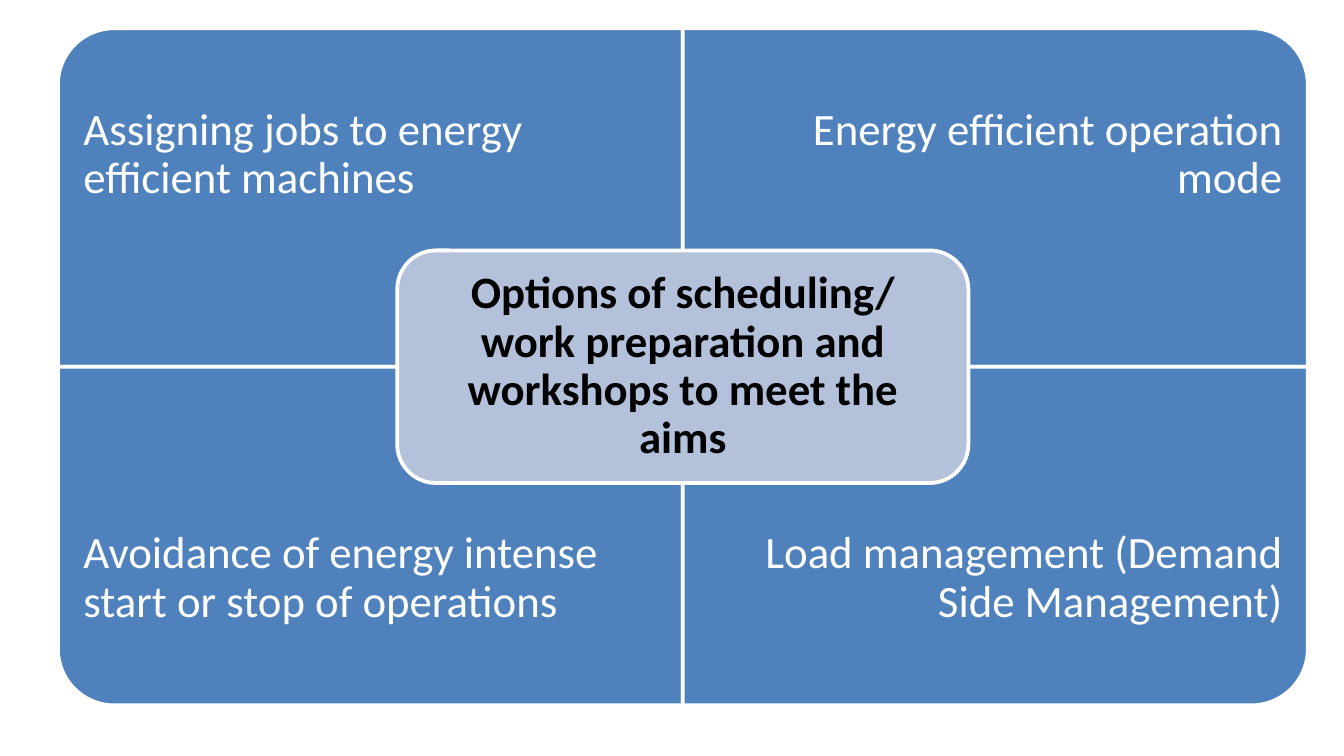
import dataclasses
import pptx
import pptx.dml.color
import pptx.enum.shapes
import pptx.enum.text
import pptx.util

Pt = pptx.util.Pt
RGB = pptx.dml.color.RGBColor.from_string
Kind = pptx.enum.shapes.MSO_SHAPE
Align = pptx.enum.text.PP_ALIGN


@dataclasses.dataclass(frozen=True)
class Theme:
    """Hold the colours and type of the slide."""
    blue: str = "4F81BD"
    pale: str = "B3C1DB"
    white: str = "FFFFFF"
    black: str = "000000"
    font: str = "Calibri"
    size: int = 24
    line: int = 2


THEME = Theme()
LEFT, TOP = 31, 15.1
WIDE, HIGH = 334.8, 181.4
TILES = [
    ("Assigning jobs to energy efficient machines", 0, 0, 270),
    ("Energy efficient operation mode", 1, 0, 0),
    ("Avoidance of energy intense start or stop of operations", 0, 1, 180),
    ("Load management (Demand Side Management)", 1, 1, 90),
]
HUB = "Options of scheduling/ work preparation and workshops to meet the aims"


def add_panel(slide, kind, midx, midy, wide, high, fill):
    """Add a filled, outlined shape around a centre point."""
    panel = slide.shapes.add_shape(
        kind, Pt(midx - wide / 2), Pt(midy - high / 2), Pt(wide), Pt(high))
    panel.shadow.inherit = False
    panel.fill.solid()
    panel.fill.fore_color.rgb = RGB(fill)
    panel.line.color.rgb = RGB(THEME.white)
    panel.line.width = Pt(THEME.line)
    return panel


def set_text(shape, text, align, color, inset, bold=False):
    """Write and format one paragraph in a shape."""
    frame = shape.text_frame
    frame.word_wrap = True
    frame.vertical_anchor = pptx.enum.text.MSO_ANCHOR.MIDDLE
    frame.margin_left = frame.margin_right = Pt(inset)
    frame.margin_top = frame.margin_bottom = Pt(inset)
    frame.text = text
    para = frame.paragraphs[0]
    para.alignment = align
    para.line_spacing = 0.9
    font = para.runs[0].font
    font.name = THEME.font
    font.size = Pt(THEME.size)
    font.bold = bold
    font.color.rgb = RGB(color)


def add_tile(slide, text, col, row, turn):
    """Add a quarter of the matrix with its label at the outer edge."""
    left, top = LEFT + col * WIDE, TOP + row * HIGH
    size = (HIGH, WIDE) if turn % 180 else (WIDE, HIGH)
    tile = add_panel(slide, Kind.ROUND_1_RECTANGLE,
                     left + WIDE / 2, top + HIGH / 2, *size, THEME.blue)
    tile.rotation = turn
    label = slide.shapes.add_textbox(
        Pt(left), Pt(top + row * HIGH / 4), Pt(WIDE), Pt(HIGH * 0.75))
    align = Align.RIGHT if col else Align.LEFT
    set_text(label, text, align, THEME.white, 13.7)


def add_hub(slide):
    """Add the central title over the four tiles."""
    hub = add_panel(slide, Kind.ROUNDED_RECTANGLE,
                    LEFT + WIDE, TOP + HIGH, 306, 124.6, THEME.pale)
    set_text(hub, HUB, Align.CENTER, THEME.black, 7.2, bold=True)


def main():
    """Build and save the slide."""
    deck = pptx.Presentation()
    deck.slide_width, deck.slide_height = Pt(720), Pt(405)
    slide = deck.slides.add_slide(deck.slide_layouts[6])
    for tile in TILES:
        add_tile(slide, *tile)
    add_hub(slide)
    deck.save("out.pptx")


if __name__ == "__main__":
    main()
